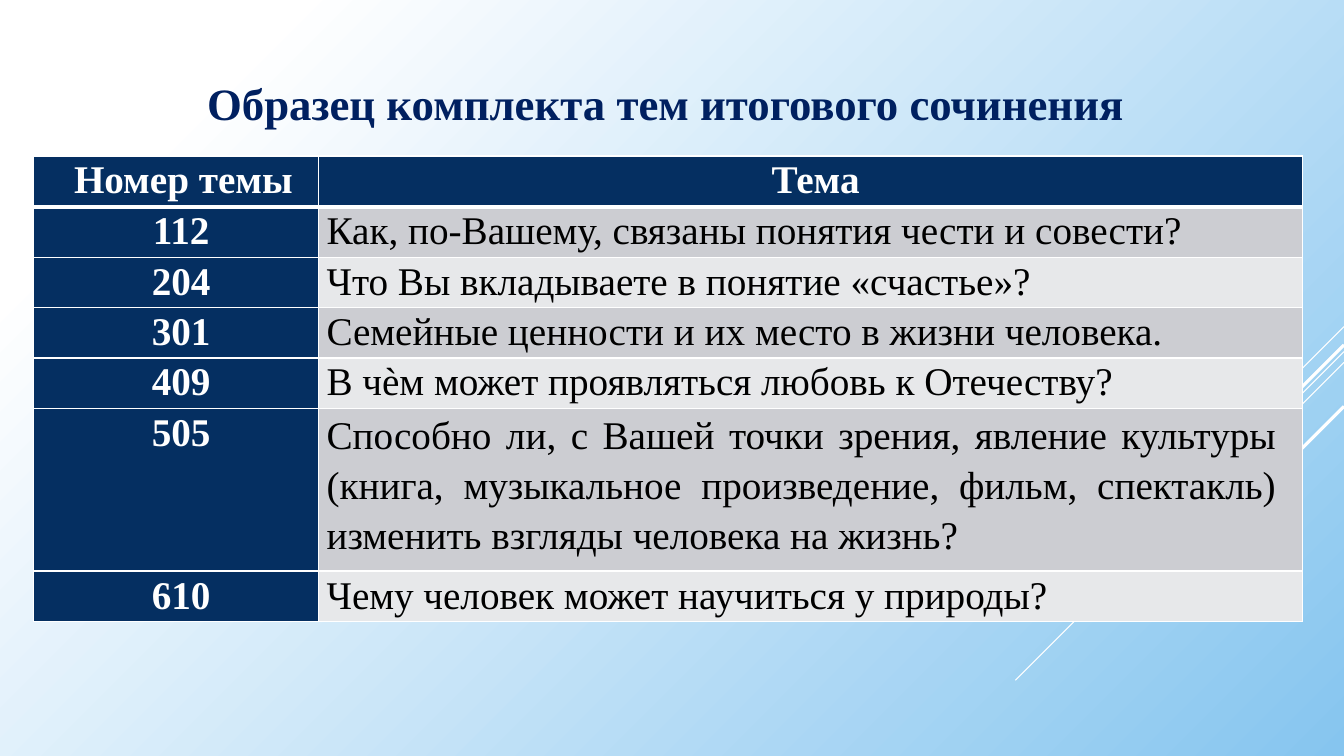
"""Build the slide with a sample set of final essay topics."""
from dataclasses import dataclass

from lxml.etree import SubElement
from pptx import Presentation
from pptx.dml.color import RGBColor
from pptx.enum.shapes import MSO_CONNECTOR
from pptx.enum.text import MSO_ANCHOR, PP_ALIGN as Align
from pptx.oxml.ns import qn
from pptx.util import Cm, Pt

WHITE = RGBColor(0xFF, 0xFF, 0xFF)
BLACK = RGBColor(0x00, 0x00, 0x00)
SKY = RGBColor(0x86, 0xC5, 0xEF)
TITLE_BLUE = RGBColor(0x00, 0x20, 0x60)
NAVY = RGBColor(0x05, 0x2F, 0x61)
BANDS = (RGBColor(0xCC, 0xCD, 0xD2), RGBColor(0xE7, 0xE8, 0xEA))
FONT = "Times New Roman"
SLIDE_W, SLIDE_H = 33.87, 19.05


@dataclass
class Ray:
    """A diagonal line falling left from the right edge, in cm."""
    top: float
    reach: float
    weight: float


@dataclass
class Topic:
    """One table row."""
    number: str
    text: str
    height: float = 1.27
    spacing: float = 1.07
    margin_right: float = 0


RAYS = [
    Ray(8.23, 2.54, 0.75),
    Ray(8.86, 8.28, 0.75),
    Ray(9.13, 5.26, 0.75),
    Ray(8.69, 4.85, 2.25),
    Ray(10.24, 3.53, 2.25),
]
TOPICS = [
    Topic("112", "Как, по-Вашему, связаны понятия чести и совести?"),
    Topic("204", "Что Вы вкладываете в понятие «счастье»?"),
    Topic("301", "Семейные ценности и их место в жизни человека."),
    Topic("409", "В чѐм может проявляться любовь к Отечеству?"),
    Topic("505", "Способно ли, с Вашей точки зрения, явление культуры (книга, "
          "музыкальное произведение, фильм, спектакль) изменить взгляды "
          "человека на жизнь?", 4.1, 1.15, 0.68),
    Topic("610", "Чему человек может научиться у природы?"),
]


def write(tf, text: str, *, size: float = 28, color: RGBColor = WHITE,
          bold: bool = True, align: Align = Align.CENTER,
          spacing: float = 1, before: float = 0) -> None:
    """Put one formatted paragraph into a text frame."""
    p = tf.paragraphs[0]
    p.alignment, p.line_spacing, p.space_before = align, spacing, Pt(before)
    r = p.add_run()
    r.text = text
    r.font.name, r.font.size, r.font.bold = FONT, Pt(size), bold
    r.font.color.rgb = color


def draw_ray(s, ray: Ray) -> None:
    """Draw one white diagonal line."""
    line = s.shapes.add_connector(
        MSO_CONNECTOR.STRAIGHT, Cm(SLIDE_W), Cm(ray.top),
        Cm(SLIDE_W - ray.reach), Cm(ray.top + ray.reach))
    line.line.color.rgb = WHITE
    line.line.width = Pt(ray.weight)
    SubElement(line._element.spPr, qn("a:effectLst"))


def style_cell(cell, fill: RGBColor, left: float, right: float = 0,
               top_line: float = 1, bottom_line: float = 1) -> None:
    """Set the margins, white borders and fill of a cell."""
    cell.margin_left, cell.margin_right = Cm(left), Cm(right)
    cell.margin_top = cell.margin_bottom = 0
    tc_pr = cell._tc.get_or_add_tcPr()
    for side, width in zip("LRTB", (1, 1, top_line, bottom_line)):
        ln = SubElement(tc_pr, qn(f"a:ln{side}"), w=str(Pt(width)))
        solid = SubElement(ln, qn("a:solidFill"))
        SubElement(solid, qn("a:srgbClr"), val=str(WHITE))
    cell.fill.solid()
    cell.fill.fore_color.rgb = fill


def draw_table(s) -> None:
    """Draw the table of topic numbers and topics."""
    height = 1.28 + sum(topic.height for topic in TOPICS)
    table = s.shapes.add_table(len(TOPICS) + 1, 2, Cm(0.85), Cm(3.93),
                               Cm(31.98), Cm(height)).table
    for column, width in zip(table.columns, (7.18, 24.8)):
        column.width = Cm(width)
    table.rows[0].height = Cm(1.28)
    for col, (text, left) in enumerate((("Номер темы", 0.36), ("Тема", 0.25))):
        cell = table.cell(0, col)
        style_cell(cell, NAVY, left, bottom_line=3)
        write(cell.text_frame, text, spacing=1.07, before=1.5)
    for row, topic in enumerate(TOPICS, 1):
        table.rows[row].height = Cm(topic.height)
        top_line = 3 if row == 1 else 1
        number, theme = table.cell(row, 0), table.cell(row, 1)
        style_cell(number, NAVY, 0.25, top_line=top_line)
        write(number.text_frame, topic.number, spacing=1.07, before=1.5)
        style_cell(theme, BANDS[(row - 1) % 2], 0.2, topic.margin_right, top_line)
        write(theme.text_frame, topic.text, color=BLACK, bold=False,
              align=Align.JUSTIFY, spacing=topic.spacing, before=1.5)


def main() -> None:
    """Assemble and save the slide."""
    prs = Presentation()
    prs.slide_width, prs.slide_height = Cm(SLIDE_W), Cm(SLIDE_H)
    s = prs.slides.add_slide(prs.slide_layouts[6])
    fill = s.background.fill
    fill.gradient()
    fill.gradient_angle = 315
    for stop, color, position in zip(fill.gradient_stops, (WHITE, SKY), (0.14, 1)):
        stop.color.rgb, stop.position = color, position
    for ray in RAYS:
        draw_ray(s, ray)
    title = s.shapes.add_textbox(Cm(3.07), Cm(1.78), Cm(27.41), Cm(1.63))
    tf = title.text_frame
    tf.word_wrap, tf.vertical_anchor = True, MSO_ANCHOR.MIDDLE
    write(tf, "Образец комплекта тем итогового сочинения", size=32, color=TITLE_BLUE)
    draw_table(s)
    prs.save("out.pptx")


if __name__ == "__main__":
    main()
